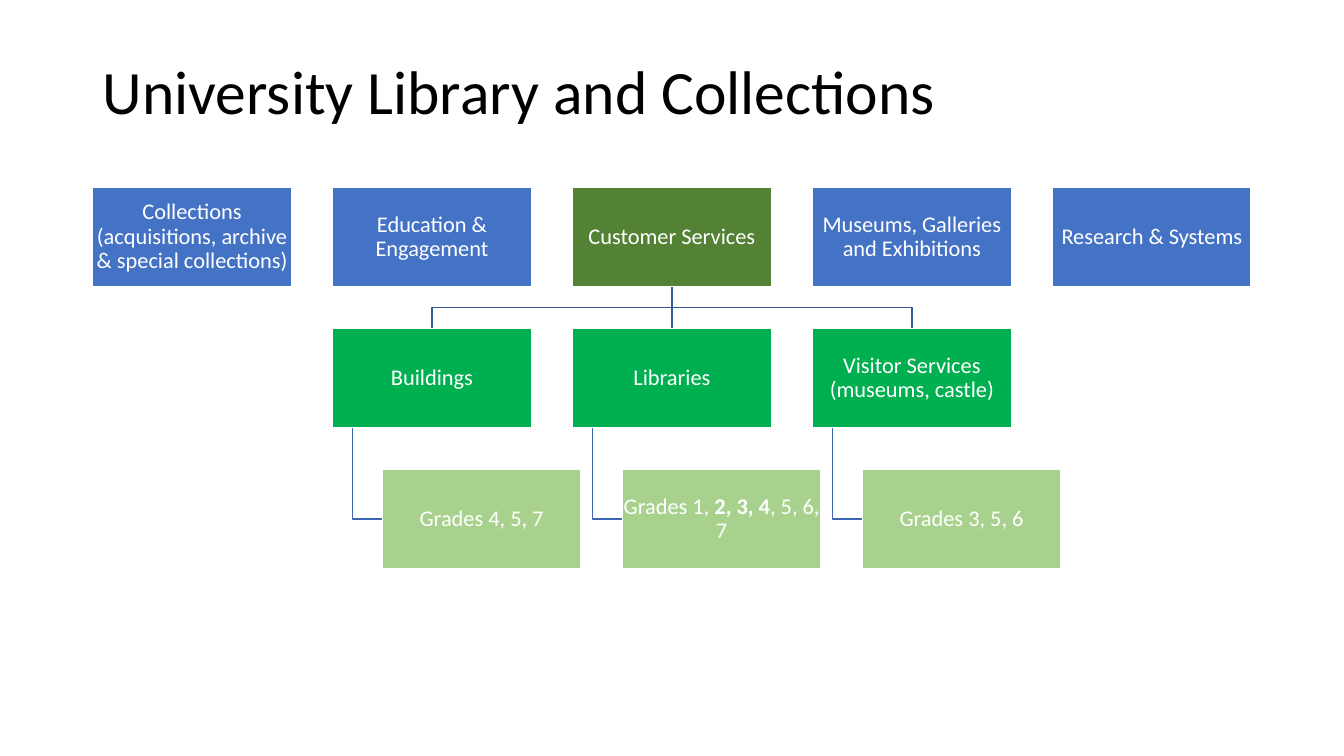
from lxml import etree
from pptx import Presentation
from pptx.dml.color import RGBColor
from pptx.enum.shapes import MSO_CONNECTOR, MSO_SHAPE
from pptx.enum.text import MSO_ANCHOR, PP_ALIGN
from pptx.oxml.ns import qn
from pptx.util import Inches, Pt

RECTANGLE = MSO_SHAPE.RECTANGLE
STRAIGHT = MSO_CONNECTOR.STRAIGHT
MIDDLE = MSO_ANCHOR.MIDDLE
LEFT, CENTER = PP_ALIGN.LEFT, PP_ALIGN.CENTER

THEME = {
    "font": "Calibri", "title_size": 44, "box_size": 16, "line": 1,
    "black": "000000", "white": "FFFFFF",
    "department": "4472C4", "selected": "548235",
    "team": "00B050", "grades": "A9D18E",
    "branch": "365B9D", "elbow": "3E67B2",
}

WIDTH, HEIGHT = 13.33, 7.5
MARGIN, TOP = 0.92, 1.86
BOX_WIDTH, BOX_HEIGHT = 1.97, 0.98
COLUMN = (WIDTH - 2 * MARGIN - BOX_WIDTH) / 4
ROW = 1.4
INDENT = BOX_WIDTH / 4
STEM = BOX_WIDTH / 10
GAP = ROW - BOX_HEIGHT

DEPARTMENTS = [
    "Collections (acquisitions, archive & special collections)",
    "Education & Engagement",
    "Customer Services",
    "Museums, Galleries and Exhibitions",
    "Research & Systems",
]
SELECTED = 2
TEAMS = [
    (1, "Buildings", [("Grades 4, 5, 7", False)]),
    (2, "Libraries", [("Grades 1, ", False), ("2, 3, 4", True), (", 5, 6, 7", False)]),
    (3, "Visitor Services (museums, castle)", [("Grades 3, 5, 6", False)]),
]


def write(shape, spans, size, color, align, inset):
    frame = shape.text_frame
    margins = {f"margin_{side}": Inches(inset) for side in ("left", "right", "top", "bottom")}
    for name, value in {"word_wrap": True, "vertical_anchor": MIDDLE, **margins}.items():
        setattr(frame, name, value)
    para = frame.paragraphs[0]
    para.alignment = align
    para.line_spacing = 0.9
    for text, bold in spans:
        span = para.add_run()
        span.text = text
        span.font.color.rgb = RGBColor.from_string(THEME[color])
        for name, value in {"name": THEME["font"], "size": Pt(size), "bold": bold}.items():
            setattr(span.font, name, value)


def trace(points, color):
    start, *rest = [(Inches(x), Inches(y)) for x, y in points]
    builder = page.shapes.build_freeform(*start)
    builder.add_line_segments(rest, close=False)
    route = builder.convert_to_shape()
    route.shadow.inherit = False
    route.fill.background()
    route.line.color.rgb = RGBColor.from_string(THEME[color])
    route.line.width = Pt(THEME["line"])


deck = Presentation()
deck.slide_width, deck.slide_height = Inches(WIDTH), Inches(HEIGHT)
page = deck.slides.add_slide(deck.slide_layouts[6])

title = page.shapes.add_textbox(Inches(MARGIN), Inches(0.21), Inches(WIDTH - 2 * MARGIN), Inches(1.45))
write(title, [("University Library and Collections", False)], THEME["title_size"], "black", LEFT, 0.1)

root = MARGIN + SELECTED * COLUMN + BOX_WIDTH / 2
root_bottom, team_top = TOP + BOX_HEIGHT, TOP + ROW
boxes = [
    (column * COLUMN, 0, [(name, False)], "selected" if column == SELECTED else "department")
    for column, name in enumerate(DEPARTMENTS)
]

for column, team, grades in TEAMS:
    left = column * COLUMN
    boxes += [(left, 1, [(team, False)], "team"), (left + INDENT, 2, grades, "grades")]

    stem = MARGIN + left + STEM
    grades_middle = TOP + 2 * ROW + BOX_HEIGHT / 2
    trace([(stem, team_top + BOX_HEIGHT), (stem, grades_middle),
           (MARGIN + left + INDENT, grades_middle)], "elbow")

    if column != SELECTED:
        center = MARGIN + left + BOX_WIDTH / 2
        bend = root_bottom + GAP / 2
        trace([(root, root_bottom), (root, bend), (center, bend), (center, team_top)], "branch")

trunk = page.shapes.add_connector(
    STRAIGHT, Inches(root), Inches(root_bottom), Inches(root), Inches(team_top))
trunk.line.color.rgb = RGBColor.from_string(THEME["branch"])
trunk.line.width = Pt(THEME["line"])
etree.SubElement(trunk.element.spPr, qn("a:effectLst"))

for left, row, spans, fill in boxes:
    box = page.shapes.add_shape(
        RECTANGLE, Inches(MARGIN + left), Inches(TOP + row * ROW),
        Inches(BOX_WIDTH), Inches(BOX_HEIGHT))
    box.shadow.inherit = False
    box.fill.solid()
    box.fill.fore_color.rgb = RGBColor.from_string(THEME[fill])
    box.line.color.rgb = RGBColor.from_string(THEME["white"])
    box.line.width = Pt(THEME["line"])
    write(box, spans, THEME["box_size"], "white", CENTER, 0.01)

deck.save("out.pptx")
